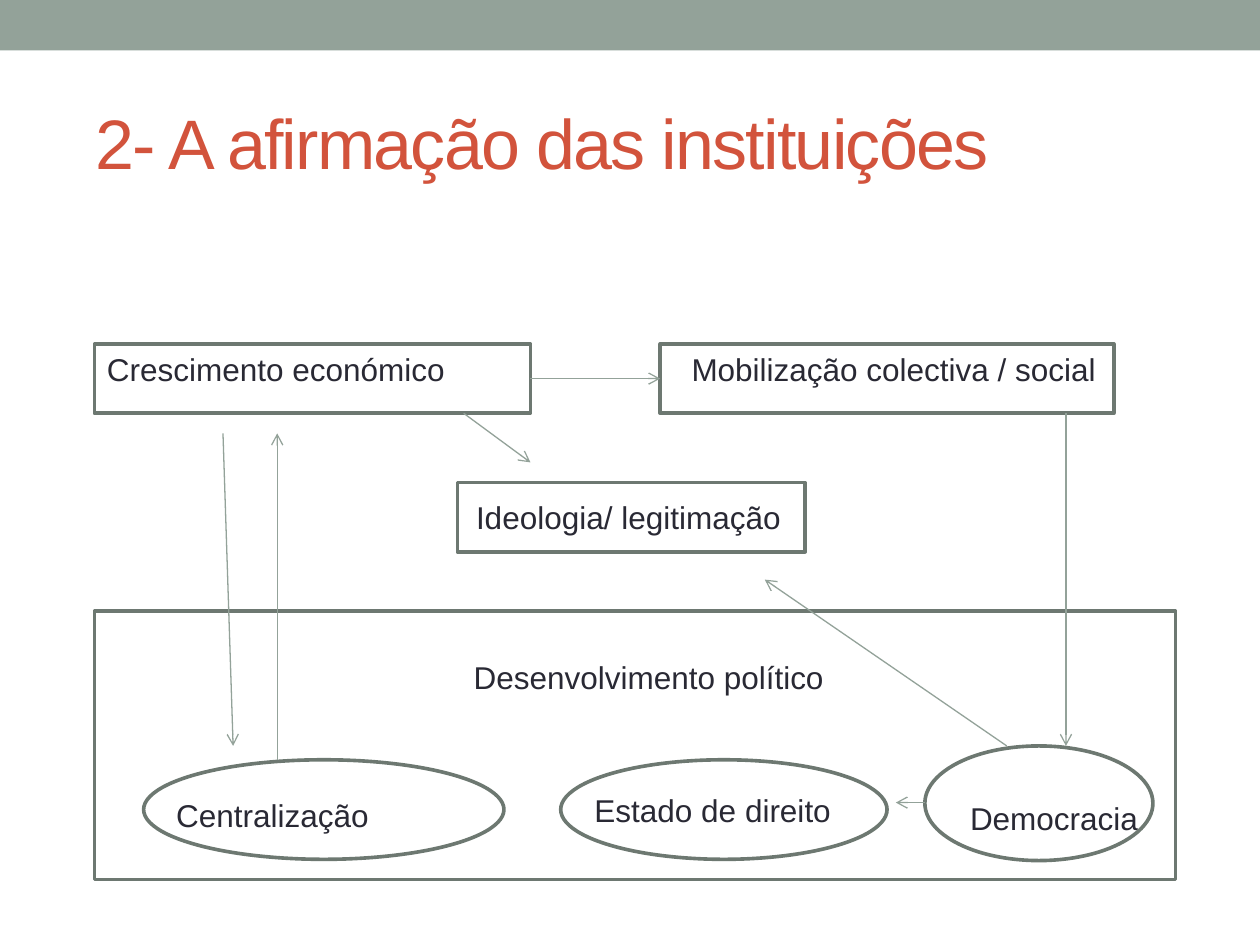
from dataclasses import dataclass

from lxml.etree import SubElement
from pptx import Presentation
from pptx.dml.color import RGBColor as RGB
from pptx.enum.shapes import MSO_CONNECTOR as LINK, MSO_SHAPE as KIND
from pptx.enum.text import MSO_ANCHOR as ANCHOR, MSO_AUTO_SIZE as AUTO, PP_ALIGN as ALIGN
from pptx.oxml.ns import qn
from pptx.util import Inches, Pt


@dataclass(frozen=True)
class Theme:
    font: str = "Arial"
    ink: str = "292934"
    title: str = "D2533C"
    sage: str = "93A299"
    edge: str = "6D7871"
    head: float = 40
    body: float = 18
    thick: float = 2.08
    thin: float = 0.75


theme = Theme()
deck = Presentation()
deck.slide_width, deck.slide_height = Inches(10), Inches(7.5)
slide = deck.slides.add_slide(deck.slide_layouts[5])
shapes = slide.shapes

# Grid of 100 columns by 75 rows, with square cells
cell = deck.slide_width / 100


def grid(*spans):
    return [round(span * cell) for span in spans]


def write(frame, text, size=theme.body, color=theme.ink, gap=0, anchor=ANCHOR.TOP,
          wrap=False, fit=AUTO.SHAPE_TO_FIT_TEXT):
    frame.word_wrap, frame.auto_size, frame.vertical_anchor = wrap, fit, anchor
    para = frame.paragraphs[0]
    para.alignment = ALIGN.LEFT
    run = para.add_run()
    run.text = text
    run.font.name, run.font.size = theme.font, Pt(size)
    run.font.color.rgb = RGB.from_string(color)
    if gap:
        run.font._element.set("spc", str(gap * 100))


# Top band
band = shapes.add_shape(KIND.RECTANGLE, *grid(0, 0, 100, 4))
band.shadow.inherit = False
band.fill.solid()
band.fill.fore_color.rgb = RGB.from_string(theme.sage)
band.line.fill.background()

# Title
title = shapes.title
title.left, title.top, title.width, title.height = grid(6.6, 5.8, 90, 10.8)
write(title.text_frame, "2- A afirmação das instituições", size=theme.head,
      color=theme.title, gap=-1, anchor=ANCHOR.MIDDLE, wrap=True, fit=AUTO.NONE)

# Labels: text, left, top, width
labels = [
    ("Crescimento económico", 7.5, 27.3, 29.1),
    ("Mobilização colectiva / social", 53.9, 27.3, 34.4),
    ("Ideologia/ legitimação", 36.8, 39, 26.4),
    ("Desenvolvimento político", 36.6, 51.7, 30.1),
    ("Centralização", 13, 62.7, 18.1),
    ("Estado de direito", 46.2, 62.3, 21),
    ("Democracia", 76, 62.9, 15.5),
]
for text, left, top, width in labels:
    box = shapes.add_textbox(*grid(left, top, width, 4))
    write(box.text_frame, text)

# Outlined frames: name, kind, left, top, width, height
frames = [
    ("growth", KIND.RECTANGLE, 7.5, 27.3, 34.6, 5.5),
    ("social", KIND.RECTANGLE, 52.4, 27.3, 36, 5.5),
    ("ideas", KIND.RECTANGLE, 36.3, 38.3, 27.6, 5.5),
    ("state", KIND.RECTANGLE, 7.5, 48.5, 85.8, 21.3),
    ("central", KIND.OVAL, 11.4, 60.3, 28.6, 7.9),
    ("law", KIND.OVAL, 44.5, 60.3, 25.9, 7.9),
    ("vote", KIND.OVAL, 73.4, 59.2, 18.1, 9.1),
]
nodes = {}
for name, kind, *area in frames:
    node = nodes[name] = shapes.add_shape(kind, *grid(*area))
    node.shadow.inherit = False
    node.fill.background()
    node.line.color.rgb = RGB.from_string(theme.edge)
    node.line.width = Pt(theme.thick)

# Arrows: from column and row, to column and row
arrows = [
    (22, 60.3, 22, 34.4),
    (42.1, 30, 52.4, 30),
    (84.6, 32.8, 84.6, 59.2),
    (79.9, 59.2, 60.7, 46),
    (73.4, 63.7, 71.1, 63.7),
    (17.7, 34.4, 18.5, 59.2),
    (36.8, 32.8, 42.1, 36.7),
]
links = []
for ends in arrows:
    link = shapes.add_connector(LINK.STRAIGHT, *grid(*ends))
    link.line.color.rgb = RGB.from_string(theme.sage)
    link.line.width = Pt(theme.thin)
    SubElement(link.line._get_or_add_ln(), qn("a:tailEnd"), type="arrow")
    SubElement(link._element.spPr, qn("a:effectLst"))
    links.append(link)

# Growth leads straight to mobilization
links[1].begin_connect(nodes["growth"], 3)
links[1].end_connect(nodes["social"], 1)

deck.save("out.pptx")
